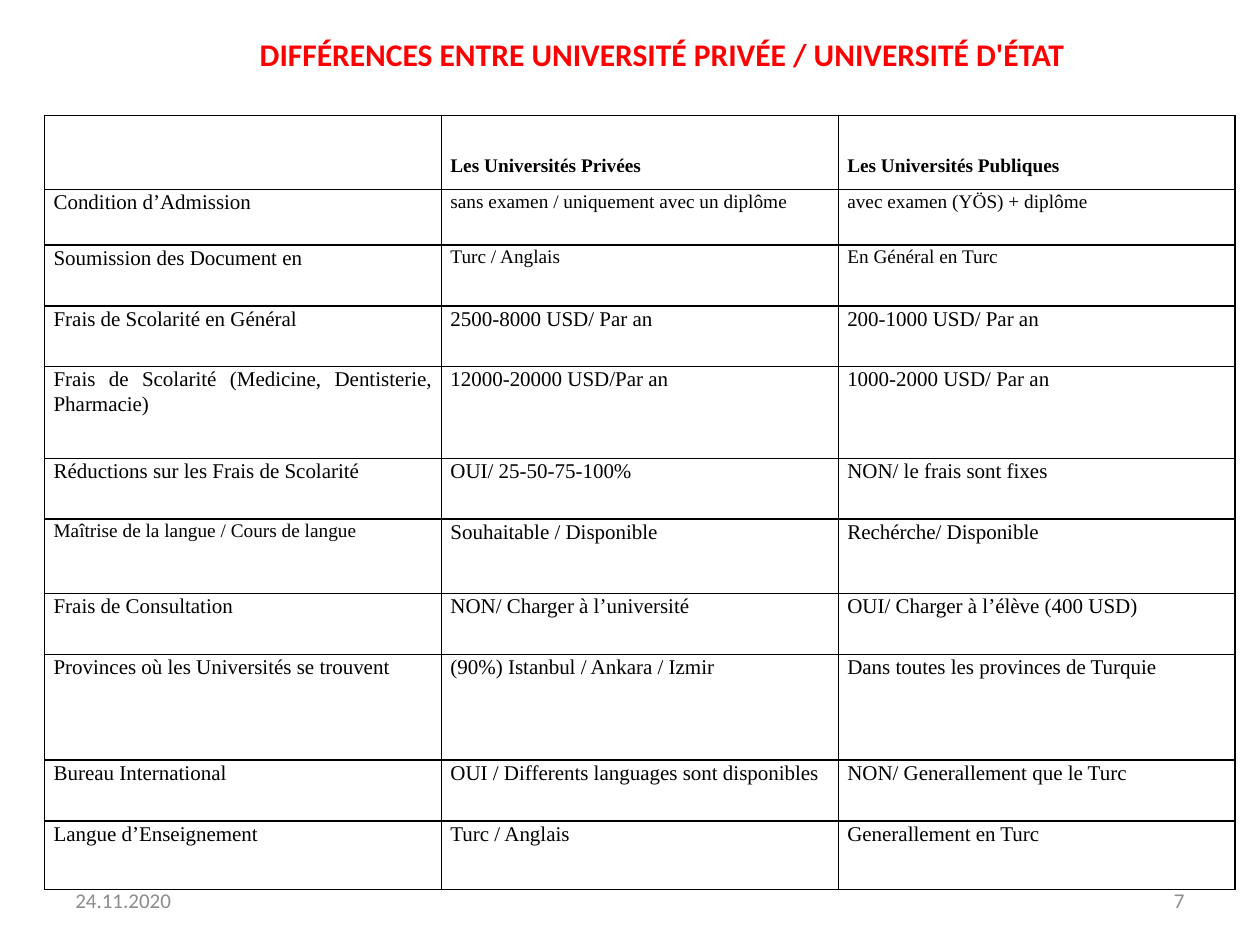
from dataclasses import dataclass

from lxml import etree
from pptx import Presentation
from pptx import util as u
from pptx.dml.color import RGBColor
from pptx.enum import text as t
from pptx.oxml import ns

SERIF = "Times New Roman"
SANS = "Calibri"
BLACK = "000000"
WHITE = "FFFFFF"
GREY = "8C8C8C"
RED = "FF0000"


@dataclass
class Row:
    high: float
    cells: tuple[str, str, str]
    sizes: tuple[int, int, int] = (12, 12, 12)


@dataclass
class Label:
    text: str
    left: float
    top: float
    wide: float
    high: float
    align: t.PP_ALIGN
    size: int = 12
    color: str = GREY
    bold: bool = False


ROWS = [
    Row(1.49, ("", "Les Universités Privées", "Les Universités Publiques"), (11, 11, 11)),
    Row(1.12, ("Condition d’Admission", "sans examen / uniquement avec un diplôme",
               "avec examen (YÖS) + diplôme"), (12, 11, 11)),
    Row(1.23, ("Soumission des Document en", "Turc / Anglais", "En Général en Turc"),
        (12, 11, 11)),
    Row(1.22, ("Frais de Scolarité en Général", "2500-8000 USD/ Par an",
               "200-1000 USD/ Par an")),
    Row(1.85, ("Frais de Scolarité (Medicine, Dentisterie, Pharmacie)",
               "12000-20000 USD/Par an", "1000-2000 USD/ Par an")),
    Row(1.22, ("Réductions sur les Frais de Scolarité", "OUI/ 25-50-75-100%",
               "NON/ le frais sont fixes")),
    Row(1.5, ("Maîtrise de la langue / Cours de langue", "Souhaitable / Disponible",
              "Rechérche/ Disponible"), (11, 12, 12)),
    Row(1.23, ("Frais de Consultation", "NON/ Charger à l’université",
               "OUI/ Charger à l’élève (400 USD)")),
    Row(2.13, ("Provinces où les Universités se trouvent",
               "(90%) Istanbul / Ankara / Izmir", "Dans toutes les provinces de Turquie")),
    Row(1.23, ("Bureau International", "OUI / Differents languages sont disponibles",
               "NON/ Generallement que le Turc")),
    Row(1.38, ("Langue d’Enseignement", "Turc / Anglais", "Generallement en Turc")),
]

LABELS = [
    Label("DIFFÉRENCES ENTRE UNIVERSITÉ PRIVÉE / UNIVERSITÉ D'ÉTAT",
          1.35, -0.1, 24, 2.36, t.PP_ALIGN.CENTER, 18, RED, True),
    Label("24.11.2020", 1.27, 17.65, 5.93, 1.01, t.PP_ALIGN.LEFT),
    Label("7", 18.2, 17.65, 5.93, 1.01, t.PP_ALIGN.RIGHT),
]


def paint(code: str) -> RGBColor:
    return RGBColor.from_string(code)


def write(frame, words: str, *, size: int, font: str, color: str, align,
          bold: bool = False, line: float = 1.0, after: float = 0) -> None:
    frame.word_wrap = True
    par = frame.paragraphs[0]
    par.alignment = align
    par.line_spacing = line
    par.space_after = u.Pt(after)
    run = par.add_run()
    run.text = words
    run.font.size = u.Pt(size)
    run.font.name = font
    run.font.bold = bold
    run.font.color.rgb = paint(color)


def edge(cell, color: str, width: float) -> None:
    props = cell._tc.get_or_add_tcPr()
    for side in ("lnL", "lnR", "lnT", "lnB"):
        line = etree.SubElement(props, ns.qn(f"a:{side}"), w=str(u.Pt(width)))
        fill = etree.SubElement(line, ns.qn("a:solidFill"))
        etree.SubElement(fill, ns.qn("a:srgbClr"), val=color)


def draw_label(slide, label: Label) -> None:
    box = slide.shapes.add_textbox(u.Cm(label.left), u.Cm(label.top),
                                   u.Cm(label.wide), u.Cm(label.high))
    box.text_frame.vertical_anchor = t.MSO_ANCHOR.MIDDLE
    write(box.text_frame, label.text, size=label.size, font=SANS,
          color=label.color, align=label.align, bold=label.bold)


def draw_cell(cell, words: str, size: int, head: bool) -> None:
    cell.margin_left = cell.margin_right = u.Cm(0.18)
    cell.margin_top = 0
    cell.margin_bottom = u.Cm(0.25 if head else 0)
    cell.vertical_anchor = t.MSO_ANCHOR.BOTTOM if head else t.MSO_ANCHOR.TOP
    edge(cell, BLACK, 1)
    cell.fill.solid()
    cell.fill.fore_color.rgb = paint(WHITE)
    if words:
        write(cell.text_frame, words, size=size, font=SERIF, color=BLACK,
              align=t.PP_ALIGN.JUSTIFY, bold=head, line=1.07, after=0 if head else 8)


def draw_grid(slide, rows: list[Row]) -> None:
    high = sum(row.high for row in rows)
    grid = slide.shapes.add_table(len(rows), 3, u.Cm(0.9), u.Cm(2.33),
                                  u.Cm(24), u.Cm(high)).table
    grid.first_row = grid.horz_banding = False
    for col in grid.columns:
        col.width = u.Cm(8)
    for i, row in enumerate(rows):
        grid.rows[i].height = u.Cm(row.high)
        for j, (words, size) in enumerate(zip(row.cells, row.sizes)):
            draw_cell(grid.cell(i, j), words, size, i == 0)


def main() -> None:
    deck = Presentation()
    deck.slide_width = u.Cm(25.4)
    deck.slide_height = u.Cm(19.05)
    slide = deck.slides.add_slide(deck.slide_layouts[6])
    for label in LABELS:
        draw_label(slide, label)
    draw_grid(slide, ROWS)
    deck.save("out.pptx")


if __name__ == "__main__":
    main()
